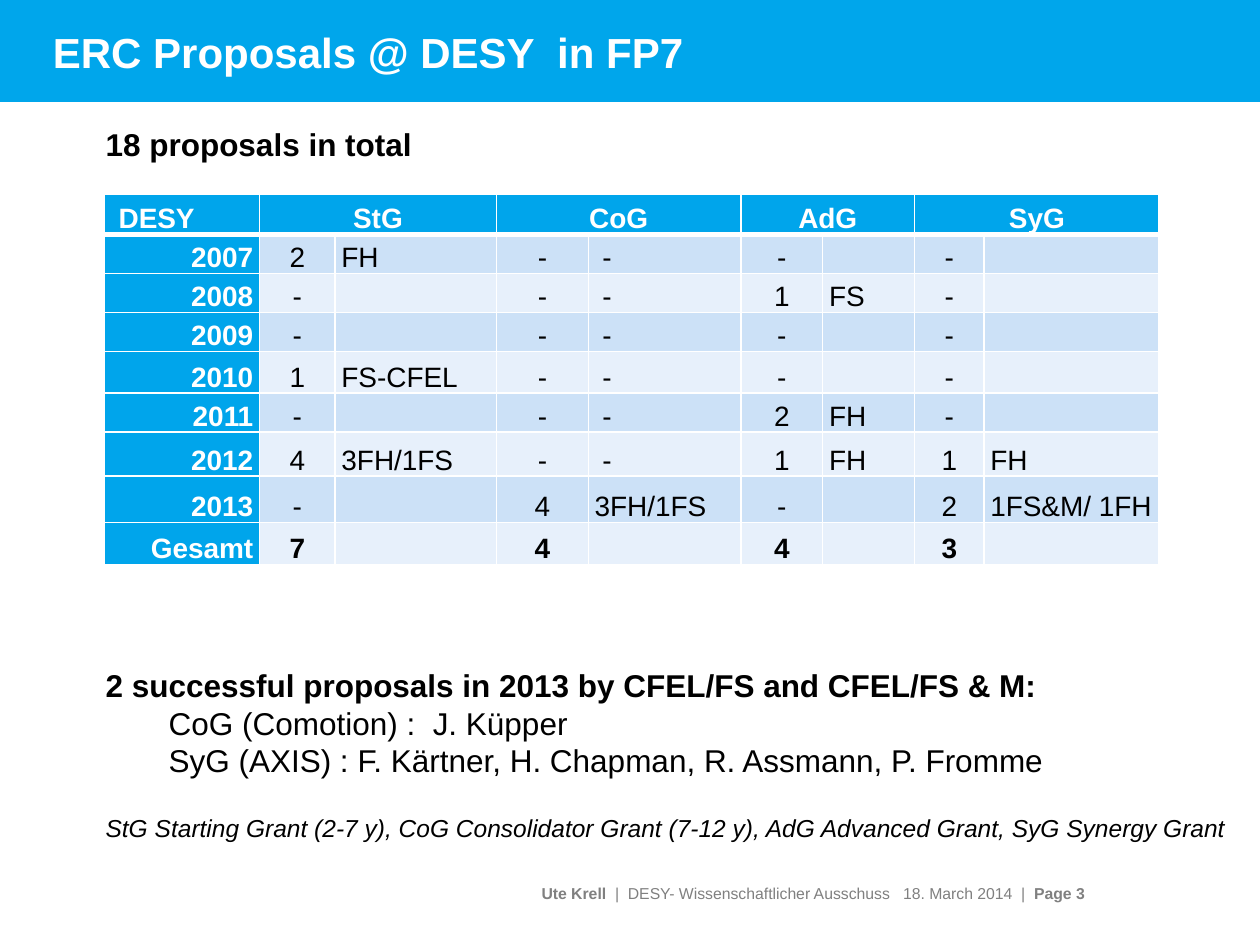
from lxml.etree import SubElement
from pptx import Presentation
from pptx.dml.color import RGBColor
from pptx.enum.shapes import MSO_SHAPE as Shape
from pptx.enum.text import MSO_ANCHOR as Anchor, MSO_AUTO_SIZE as AutoSize, PP_ALIGN as Align
from pptx.oxml.ns import qn
from pptx.util import Inches, Pt

COLORS = {
    "bar": "00A6EB", "head": "00A5EB", "odd": "CCE1F7", "even": "E7F0FB",
    "white": "FFFFFF", "black": "000000", "grey": "808080",
}
CELL = 0.1  # side of one grid square in inches; the slide is 100 columns by 75 rows

GRANTS = ["StG", "CoG", "AdG", "SyG"]
# One row per year: number and groups for each grant
PROPOSALS = [
    ("2007", "2", "FH", "-", " -", "-", "", "-", ""),
    ("2008", "-", "", "-", " -", "1", "FS", "-", ""),
    ("2009", "-", "", "-", " -", "-", "", "-", ""),
    ("2010", "1", "FS-CFEL", "-", " -", "-", "", "-", ""),
    ("2011", "-", "", "-", " -", "2", "FH", "-", ""),
    ("2012", "4", "3FH/1FS", "-", " -", "1", "FH", "1", "FH"),
    ("2013", "-", "", "4", "3FH/1FS", "-", "", "2", "1FS&M/ 1FH"),
    ("Gesamt", "7", "", "4", "", "4", "", "3", ""),
]
COLUMN_WIDTHS = [12.3, 6, 12.8, 7.3, 12.1, 6.5, 7.3, 5.5, 13.9]
ROW_HEIGHTS = [3.2, 3.1, 3.1, 3.1, 3.3, 3.1, 3.5, 3.7, 3.3]


def grid(*units):
    return [Inches(unit * CELL) for unit in units]


class Deck:
    """Style and current slide; every length is in grid squares."""

    font = "Arial"

    def __init__(self):
        self.file = Presentation()
        self.file.slide_width, self.file.slide_height = grid(100, 75)
        self.slide = self.file.slides.add_slide(self.file.slide_layouts[5])

    def style(self, run, size, color="black", bold=False, italic=False):
        font = run.font
        font.name, font.size, font.bold, font.italic = self.font, Pt(size), bold, italic
        font.color.rgb = RGBColor.from_string(COLORS[color])

    def bar(self, place, color):
        band = self.slide.shapes.add_shape(Shape.RECTANGLE, *grid(*place))
        band.shadow.inherit = False
        band.fill.solid()
        band.fill.fore_color.rgb = RGBColor.from_string(COLORS[color])
        band.line.fill.background()
        # The bar lies behind the title
        tree = self.slide.shapes._spTree
        tree.remove(band._element)
        tree.insert(2, band._element)

    def title(self, place, wording):
        heading = self.slide.shapes.title
        heading.left, heading.top, heading.width, heading.height = grid(*place)
        frame = heading.text_frame
        frame.text = wording
        frame.auto_size = AutoSize.NONE
        frame.vertical_anchor = Anchor.MIDDLE
        frame.paragraphs[0].alignment = Align.LEFT
        self.style(frame.paragraphs[0].runs[0], 24, "white", bold=True)

    def text(self, place, lines, size, color="black", italic=False, align=Align.LEFT):
        """Add lines, each a list of (wording, bold) runs; return the text frame."""
        frame = self.slide.shapes.add_textbox(*grid(*place)).text_frame
        frame.word_wrap = True
        frame.vertical_anchor = Anchor.MIDDLE
        for index, line in enumerate(lines):
            paragraph = frame.add_paragraph() if index else frame.paragraphs[0]
            paragraph.alignment = align
            for wording, bold in line:
                run = paragraph.add_run()
                run.text = wording
                self.style(run, size, color, bold, italic)
        return frame

    def indent(self, paragraph, margin, tab):
        properties = paragraph._p.get_or_add_pPr()
        properties.set("marL", str(grid(margin)[0]))
        properties.set("indent", "0")
        stops = SubElement(properties, qn("a:tabLst"))
        SubElement(stops, qn("a:tab"), pos=str(grid(tab)[0]), algn="l")

    def table(self, place, widths, heights):
        grid_table = self.slide.shapes.add_table(len(heights), len(widths), *grid(*place)).table
        for column, width in zip(grid_table.columns, grid(*widths)):
            column.width = width
        for row, height in zip(grid_table.rows, grid(*heights)):
            row.height = height
        return grid_table

    def borders(self, cell, bottom):
        properties = cell._tc.get_or_add_tcPr()
        for side, width in (("L", 1), ("R", 1), ("T", 1), ("B", bottom)):
            edge = SubElement(properties, qn(f"a:ln{side}"), w=str(Pt(width)))
            fill = SubElement(edge, qn("a:solidFill"))
            SubElement(fill, qn("a:srgbClr"), val=COLORS["white"])

    def cell(self, cell, wording, fill, align, color="black", bold=False, bottom=1):
        self.borders(cell, bottom)
        cell.fill.solid()
        cell.fill.fore_color.rgb = RGBColor.from_string(COLORS[fill])
        cell.margin_left = cell.margin_right = Inches(0.05)
        cell.margin_top = cell.margin_bottom = 0
        cell.vertical_anchor = Anchor.BOTTOM
        if wording:
            paragraph = cell.text_frame.paragraphs[0]
            paragraph.text = wording
            paragraph.alignment = align
            paragraph.line_spacing = 1.15
            self.style(paragraph.runs[0], 16, color, bold)


def fill_proposals(deck, table):
    header = [" DESY"] + [label for grant in GRANTS for label in (grant, "")]
    for column, label in enumerate(header):
        deck.cell(table.cell(0, column), label, "head",
                  Align.CENTER if column else Align.LEFT, "white", True, bottom=3)
    for first in range(1, len(header), 2):
        table.cell(0, first).merge(table.cell(0, first + 1))

    for row, (year, *entries) in enumerate(PROPOSALS, start=1):
        deck.cell(table.cell(row, 0), year, "head", Align.RIGHT, "white", True)
        for column, entry in enumerate(entries, start=1):
            deck.cell(table.cell(row, column), entry, "odd" if row % 2 else "even",
                      Align.CENTER if column % 2 else Align.LEFT,
                      bold=year == "Gesamt")


def main():
    deck = Deck()
    deck.bar((0, 0, 100, 8.1), "bar")
    deck.title((3.2, 1.1, 93.2, 6), "ERC Proposals @ DESY  in FP7")
    footer = deck.text(
        (3.1, 68.7, 83, 4.4),
        [[("Ute Krell ", True),
          (" |  DESY- Wissenschaftlicher Ausschuss   18. March 2014  |  ", False),
          ("Page 3", True)]],
        9, "grey", align=Align.RIGHT)
    footer.margin_right = 0

    deck.text((7.4, 9.4, 26.7, 4), [[("18 proposals in total", True)]], 18)
    fill_proposals(deck, deck.table((8.3, 15.4, 83.8, 29.3), COLUMN_WIDTHS, ROW_HEIGHTS))

    successes = deck.text(
        (7.4, 50.8, 82.8, 11.6),
        [[("2 successful proposals in 2013 by CFEL/FS and CFEL/FS & M:", True)],
         [("CoG (Comotion) :  J. Küpper", False)],
         [("SyG (AXIS) :\tF. Kärtner, H. Chapman, R. Assmann, P. Fromme", False)]],
        18)
    heading, *winners = successes.paragraphs
    heading.line_spacing = 1.5
    for winner in winners:
        deck.indent(winner, margin=5, tab=30.5)

    deck.text(
        (7.4, 64, 91.3, 3.4),
        [[("StG Starting Grant (2-7 y), CoG Consolidator Grant (7-12 y), "
           "AdG Advanced Grant, SyG Synergy Grant", False)]],
        14, italic=True)
    deck.file.save("out.pptx")


if __name__ == "__main__":
    main()
